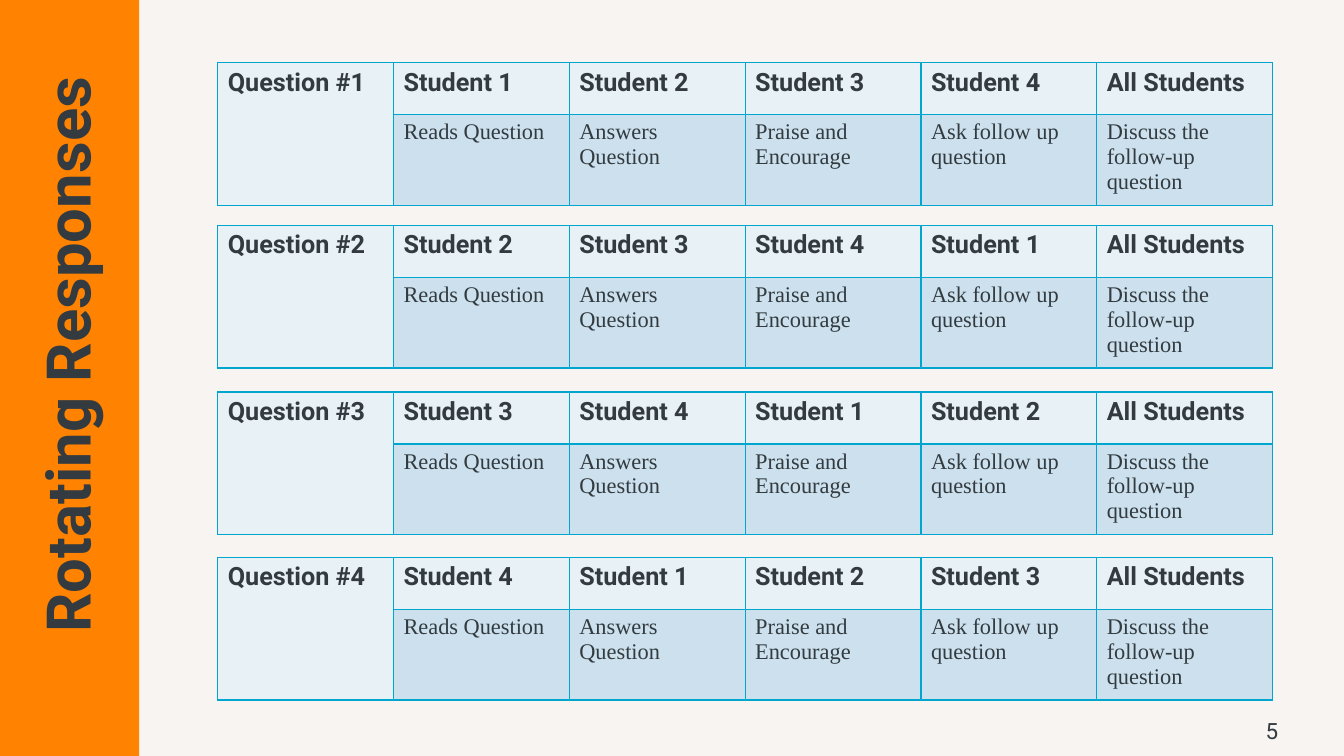
import pptx
import pptx.dml.color
import pptx.enum.shapes
import pptx.enum.text
import pptx.oxml
import pptx.oxml.ns
import pptx.util

Pt = pptx.util.Pt
INK, ORANGE, CREAM = "333B41", "FF8300", "F7F4F1"
HEAD, BODY, EDGE = "E7F1F6", "CCE1ED", "00A6CE"
TOPS = [44.8, 160.8, 280, 398]
TASKS = ["Reads Question", "Answers Question", "Praise and Encourage",
         "Ask follow up question", "Discuss the follow-up question"]


def paint(fill, color):
    fill.solid()
    fill.fore_color.rgb = pptx.dml.color.RGBColor.from_string(color)


def write(frame, text, size, face="Roboto", bold=False, align=None):
    frame.text = text
    para = frame.paragraphs[0]
    para.alignment = align
    font = para.runs[0].font
    font.size, font.name, font.bold = Pt(size), face, bold
    paint(font.fill, INK)


def border(cell):
    props = cell._tc.get_or_add_tcPr()
    for index, side in enumerate(("lnL", "lnR", "lnT", "lnB")):
        line = pptx.oxml.parse_xml(
            f'<a:{side} {pptx.oxml.ns.nsdecls("a")} w="{Pt(1)}"><a:solidFill>'
            f'<a:srgbClr val="{EDGE}"/></a:solidFill></a:{side}>')
        props.insert(index, line)


def add_band(slide):
    band = slide.shapes.add_shape(pptx.enum.shapes.MSO_SHAPE.RECTANGLE,
                                  0, 0, Pt(99.4), Pt(540))
    band.shadow.inherit = False
    paint(band.fill, ORANGE)
    band.line.fill.background()
    return band


def add_title(slide, band, text):
    """Turn the title upright and lay it over the band."""
    title = slide.shapes.title
    title.left, title.top = Pt(-190.8), Pt(213.8)
    title.width, title.height = Pt(482.4), Pt(79.2)
    title.rotation = 270
    frame = title.text_frame
    write(frame, text, 44, bold=True, align=pptx.enum.text.PP_ALIGN.CENTER)
    frame.vertical_anchor = pptx.enum.text.MSO_ANCHOR.MIDDLE
    frame.paragraphs[0].line_spacing = 0.9
    band.element.addnext(title.element)


def add_number(slide, text):
    box = slide.shapes.add_textbox(Pt(874), Pt(507.6), Pt(69), Pt(28.8))
    frame = box.text_frame
    frame.word_wrap = True
    frame.vertical_anchor = pptx.enum.text.MSO_ANCHOR.MIDDLE
    write(frame, text, 16, align=pptx.enum.text.PP_ALIGN.CENTER)


def add_round(slide, turn, top):
    """Add one question's table, with the students shifted by turn."""
    shape = slide.shapes.add_table(2, 6, Pt(155.5), Pt(top), Pt(753.6), Pt(97.6))
    table = shape.table
    table.first_row = table.horz_banding = False
    for row, height in zip(table.rows, (37.2, 60.4)):
        row.height = Pt(height)
    for cell in table.iter_cells():
        paint(cell.fill, HEAD)
        border(cell)
    students = [f"Student {(turn + seat) % 4 + 1}" for seat in range(4)]
    heads = [f"Question #{turn + 1}", *students, "All Students"]
    for col, head in enumerate(heads):
        write(table.cell(0, col).text_frame, head, 18, bold=True)
    for col, task in enumerate(TASKS, 1):
        cell = table.cell(1, col)
        paint(cell.fill, BODY)
        write(cell.text_frame, task, 16, "Times New Roman")
    table.cell(0, 0).merge(table.cell(1, 0))


def main():
    deck = pptx.Presentation()
    deck.slide_width, deck.slide_height = Pt(960), Pt(540)
    slide = deck.slides.add_slide(deck.slide_layouts[5])
    paint(slide.background.fill, CREAM)
    band = add_band(slide)
    add_title(slide, band, "Rotating Responses")
    add_number(slide, "5")
    for turn, top in enumerate(TOPS):
        add_round(slide, turn, top)
    deck.save("out.pptx")


if __name__ == "__main__":
    main()
